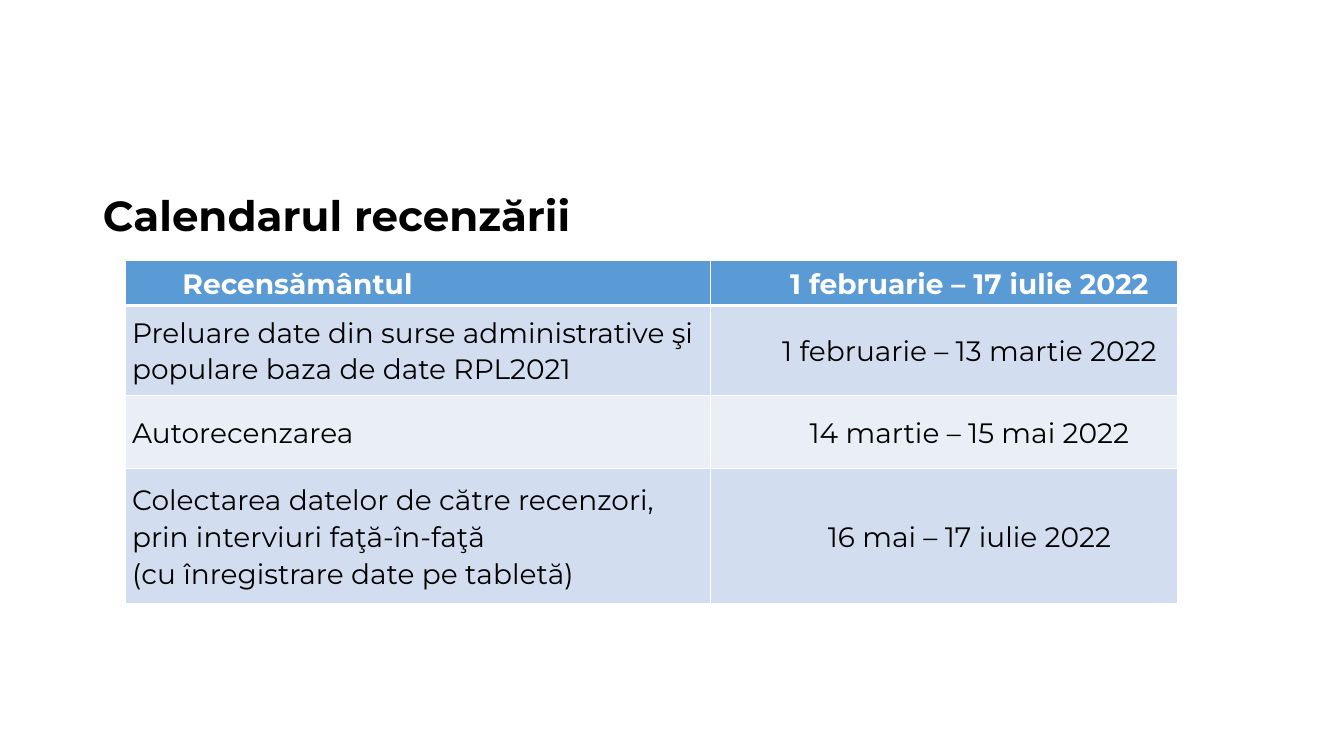
from pptx import Presentation
from pptx import util as u
from pptx.dml.color import RGBColor
from pptx.enum import text
from pptx.oxml import parse_xml
from pptx.oxml.ns import nsdecls

COLORS = {
    "white": "FFFFFF",
    "black": "000000",
    "header": "5B9BD5",
    "odd": "D2DEEF",
    "even": "EAEFF7",
}
FONT = "Montserrat"
COLUMN_WIDTHS = (5.81, 4.63)
ROW_HEIGHTS = (0.45, 0.89, 0.73, 1.34)
CALENDAR = (
    ("Recensământul", "1 februarie – 17 iulie 2022"),
    ("Preluare date din surse administrative şi populare baza de date RPL2021",
     "1 februarie – 13 martie 2022"),
    ("Autorecenzarea", "14 martie – 15 mai 2022"),
    ("Colectarea datelor de către recenzori, prin interviuri faţă-în-faţă\n"
     "(cu înregistrare date pe tabletă)", "16 mai – 17 iulie 2022"),
)


def color(name):
    return RGBColor.from_string(COLORS[name])


def format_para(para, size, color_name, bold, spacing, align):
    para.alignment = align
    para.line_spacing = spacing
    para.font.name = FONT
    para.font.size = u.Pt(size)
    para.font.bold = bold
    para.font.color.rgb = color(color_name)


def add_title(page, left, top, width, height):
    title = page.shapes.title
    title.left, title.top = u.Inches(left), u.Inches(top)
    title.width, title.height = u.Inches(width), u.Inches(height)
    frame = title.text_frame
    frame.text = "Calendarul recenzării"
    frame.auto_size = text.MSO_AUTO_SIZE.NONE
    frame.vertical_anchor = text.MSO_ANCHOR.MIDDLE
    format_para(frame.paragraphs[0], 30, "black", True, 0.9, text.PP_ALIGN.LEFT)


def set_borders(cell, widths):
    properties = cell._tc.get_or_add_tcPr()
    for index, (side, width) in enumerate(widths.items()):
        properties.insert(index, parse_xml(
            f'<a:ln{side} {nsdecls("a")} w="{u.Pt(width)}"><a:solidFill>'
            f'<a:srgbClr val="{COLORS["white"]}"/></a:solidFill></a:ln{side}>'))


def fill_cell(cell, words, row, column):
    header = row == 0
    cell.margin_left = cell.margin_right = u.Inches(0.07)
    cell.margin_top = cell.margin_bottom = 0
    cell.vertical_anchor = text.MSO_ANCHOR.MIDDLE
    cell.fill.solid()
    cell.fill.fore_color.rgb = color("header" if header else "odd" if row % 2 else "even")
    set_borders(cell, {"L": 1, "R": 1, "T": 3 if row == 1 else 1, "B": 3 if header else 1})
    cell.text_frame.text = words
    for para in cell.text_frame.paragraphs:
        if header or column == 1:
            para._p.get_or_add_pPr().set("marL", str(u.Inches(0.5)))
        format_para(para, 20, "white" if header else "black", header, 1.07,
                    text.PP_ALIGN.CENTER if column == 1 else text.PP_ALIGN.LEFT)


def add_calendar(page, left, top):
    table = page.shapes.add_table(
        len(ROW_HEIGHTS), len(COLUMN_WIDTHS), u.Inches(left), u.Inches(top),
        u.Inches(sum(COLUMN_WIDTHS)), u.Inches(sum(ROW_HEIGHTS))).table
    for column, width in zip(table.columns, COLUMN_WIDTHS):
        column.width = u.Inches(width)
    for row, height in zip(table.rows, ROW_HEIGHTS):
        row.height = u.Inches(height)
    for row, entries in enumerate(CALENDAR):
        for column, words in enumerate(entries):
            fill_cell(table.cell(row, column), words, row, column)


def main():
    deck = Presentation()
    deck.slide_width, deck.slide_height = u.Inches(13.33), u.Inches(7.5)
    page = deck.slides.add_slide(deck.slide_layouts[5])
    add_title(page, 0.92, 1.56, 11.5, 1.2)
    add_calendar(page, 1.24, 2.58)
    deck.save("out.pptx")


if __name__ == "__main__":
    main()
